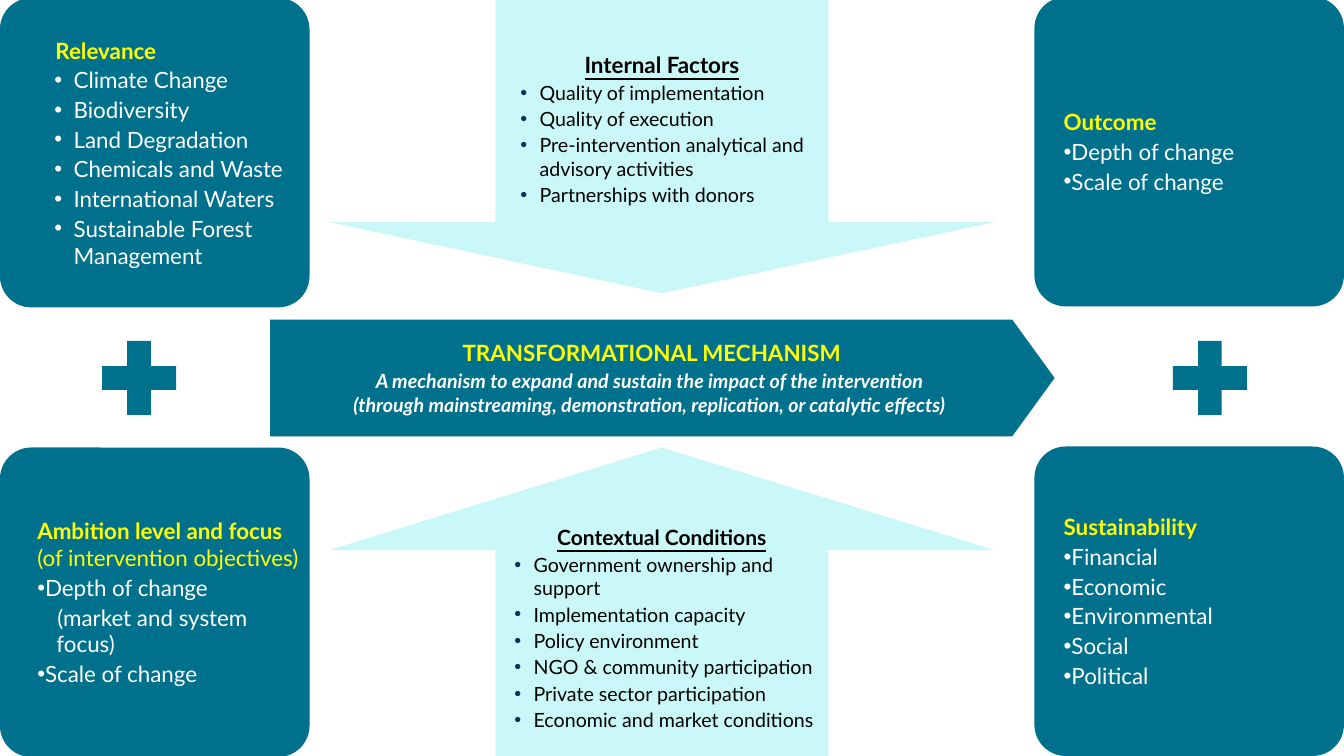
from dataclasses import dataclass

from lxml import etree
from pptx import Presentation
from pptx.dml.color import RGBColor
from pptx.enum.shapes import MSO_SHAPE
from pptx.enum.text import MSO_ANCHOR, PP_ALIGN
from pptx.oxml.ns import qn
from pptx.util import Inches, Pt

ROUND, PLUS = MSO_SHAPE.ROUNDED_RECTANGLE, MSO_SHAPE.MATH_PLUS
UP, DOWN, PENTAGON = MSO_SHAPE.UP_ARROW, MSO_SHAPE.DOWN_ARROW, MSO_SHAPE.PENTAGON
MIDDLE = MSO_ANCHOR.MIDDLE
CENTER, LEFT = PP_ALIGN.CENTER, PP_ALIGN.LEFT

COLORS = {"teal": "00718C", "aqua": "CAF8F8", "yellow": "FFFF00",
          "white": "FFFFFF", "black": "000000", "navy": "0C305B"}
FONT = "Lato"


@dataclass(frozen=True)
class Run:
    text: str
    size: int
    color: str
    bold: bool = False
    italic: bool = False
    underline: bool = False


@dataclass(frozen=True)
class Para:
    runs: tuple[Run, ...]
    left: float = 0
    first: float = 0
    bullet: str = ""  # colour name of the bullet, empty for none
    center: bool = False


@dataclass(frozen=True)
class Block:
    kind: MSO_SHAPE
    box: tuple[float, float, float, float]
    fill: str
    adjust: tuple[float, ...] = ()
    insets: tuple[float, float] = (0, 0.05)  # left, then top and bottom
    paras: tuple[Para, ...] = ()


def rgb(name: str) -> RGBColor:
    return RGBColor.from_string(COLORS[name])


def bullets(texts: list[str], left: float, size: int, color: str, bullet: str) -> tuple[Para, ...]:
    return tuple(Para((Run(t, size, color),), left, -0.19, bullet) for t in texts)


def card_bullets(*texts: str, left: float = 0) -> tuple[Para, ...]:
    return bullets(list(texts), left, 16, "white", "white")


def arrow_bullets(*texts: str, left: float) -> tuple[Para, ...]:
    return bullets(list(texts), left, 14, "black", "navy")


def card_heading(text: str, left: float = 0, first: float = 0) -> Para:
    return Para((Run(text, 16, "yellow", bold=True),), left, first)


def arrow_heading(text: str, size: int) -> Para:
    return Para((Run(text, size, "black", bold=True, underline=True),), center=True)


def add_run(p, run: Run) -> None:
    """Add a run, turning each newline into a line break."""
    for i, text in enumerate(run.text.split("\n")):
        if i:
            p.add_line_break()
        if not text:
            continue
        r = p.add_run()
        r.text = text
        r.font.name, r.font.size = FONT, Pt(run.size)
        r.font.bold, r.font.italic, r.font.underline = run.bold, run.italic, run.underline
        r.font.color.rgb = rgb(run.color)


def format_para(p, para: Para) -> None:
    p.alignment = CENTER if para.center else LEFT
    p.space_after = Pt(2)
    pPr = p._p.get_or_add_pPr()
    pPr.set("marL", str(Inches(para.left)))
    pPr.set("indent", str(Inches(para.first)))
    if para.bullet:
        color = etree.SubElement(pPr, qn("a:buClr"))
        etree.SubElement(color, qn("a:srgbClr"), val=COLORS[para.bullet])
        etree.SubElement(pPr, qn("a:buFont"), typeface="Arial")
        etree.SubElement(pPr, qn("a:buChar"), char="•")
    for run in para.runs:
        add_run(p, run)


def add_block(s, block: Block) -> None:
    sp = s.shapes.add_shape(block.kind, *(Inches(v) for v in block.box))
    sp.shadow.inherit = False
    sp.fill.solid()
    sp.fill.fore_color.rgb = rgb(block.fill)
    sp.line.fill.background()
    for i, value in enumerate(block.adjust):
        sp.adjustments[i] = value
    tf = sp.text_frame
    tf.word_wrap, tf.vertical_anchor = True, MIDDLE
    left, vertical = block.insets
    tf.margin_left, tf.margin_right = Inches(left), 0
    tf.margin_top = tf.margin_bottom = Inches(vertical)
    for i, para in enumerate(block.paras):
        format_para(tf.add_paragraph() if i else tf.paragraphs[0], para)


def card(left: float, top: float, inset: float, *paras: Para) -> Block:
    return Block(ROUND, (left, top, 3.07, 3.07), "teal", (0.101,), (inset, 0), paras)


def factor_arrow(kind: MSO_SHAPE, top: float, height: float, head: float, *paras: Para) -> Block:
    return Block(kind, (3.26, top, 6.61, height), "aqua", (0.5, head), paras=paras)


RIGHT_COL = 10.26
MECHANISM = Block(PENTAGON, (2.68, 3.17, 7.78, 1.16), "teal", (0.363,), paras=(
    Para((Run("TRANSFORMATIONAL MECHANISM", 16, "yellow", bold=True),), center=True),
    Para((Run("A mechanism to expand and sustain the impact of the intervention \n"
              "(through mainstreaming, demonstration, replication, or catalytic effects) ",
              14, "white", bold=True, italic=True),), center=True)))

BLOCKS = [
    MECHANISM,
    factor_arrow(UP, 4.44, 3.07, 0.332,
                 arrow_heading("Contextual Conditions", 15),
                 *arrow_bullets("Government ownership and support", "Implementation capacity",
                                "Policy environment", "NGO & community participation",
                                "Private sector participation",
                                "Economic and market conditions", left=0.38)),
    *(Block(PLUS, (left, 3.25, 1, 1), "teal") for left in (0.88, 11.5)),
    factor_arrow(DOWN, 0, 2.91, 0.243,
                 arrow_heading("Internal Factors", 16),
                 *arrow_bullets("Quality of implementation", "Quality of execution",
                                "Pre-intervention analytical and advisory activities",
                                "Partnerships with donors", left=0.44)),
    card(0, -0.02, 0.2,
         card_heading("Relevance", 0.38, -0.12),
         *card_bullets("Climate Change", "Biodiversity", "Land Degradation",
                       "Chemicals and Waste", "International Waters",
                       "Sustainable Forest Management", left=0.44)),
    card(RIGHT_COL, 4.43, 0.2,
         card_heading("Sustainability"),
         *card_bullets("Financial", "Economic", "Environmental", "Social", "Political")),
    card(RIGHT_COL, -0.03, 0.2,
         card_heading("Outcome"),
         *card_bullets("Depth of change", "Scale of change")),
    card(0, 4.44, 0.28,
         Para((Run("Ambition level and focus\n", 16, "yellow", bold=True),
               Run("(of intervention objectives)", 16, "yellow"))),
         *card_bullets("Depth of change"),
         Para((Run("(market and system focus)", 16, "white"),), 0.19, 0.01),
         *card_bullets("Scale of change")),
]


def main() -> None:
    prs = Presentation()
    prs.slide_width, prs.slide_height = Inches(13.33), Inches(7.5)
    s = prs.slides.add_slide(prs.slide_layouts[6])
    for block in BLOCKS:
        add_block(s, block)
    prs.save("out.pptx")


if __name__ == "__main__":
    main()
